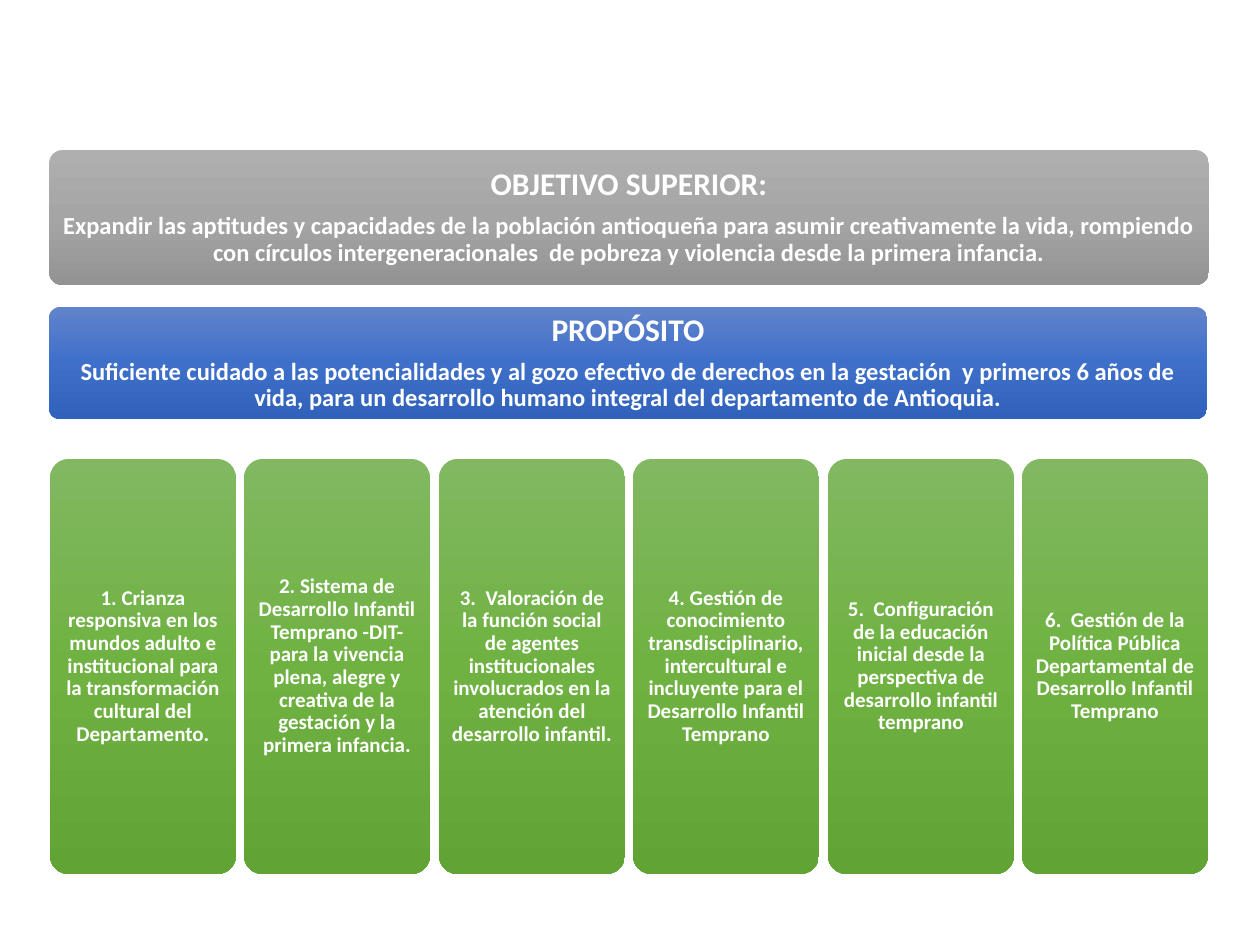
from copy import deepcopy

from pptx import Presentation
from pptx.dml.color import RGBColor
from pptx.enum.shapes import MSO_SHAPE
from pptx.enum.text import MSO_ANCHOR, PP_ALIGN
from pptx.oxml.ns import qn
from pptx.util import Pt

ROUNDED = MSO_SHAPE.ROUNDED_RECTANGLE
MIDDLE = MSO_ANCHOR.MIDDLE
CENTER = PP_ALIGN.CENTER

EMU_PER_PX = 914400 // 126
GRAY = ("AFAFAF", "A5A5A5", "939393")
BLUE = ("6183CB", "3E70CA", "3062BB")
GREEN = ("81B861", "6FB242", "62A336")

LEFT, RIGHT = 50, 1208
PILLAR_TOP, PILLAR_WIDTH, PILLAR_HEIGHT = 459, 186, 415

BANNERS = [
    ((49, 150, 1160, 135), GRAY, "OBJETIVO SUPERIOR:",
     "Expandir las aptitudes y capacidades de la población antioqueña para asumir "
     "creativamente la vida, rompiendo con círculos intergeneracionales  de pobreza "
     "y violencia desde la primera infancia."),
    ((49, 307, 1158, 112), BLUE, "PROPÓSITO",
     "Suficiente cuidado a las potencialidades y al gozo efectivo de derechos en la "
     "gestación  y primeros 6 años de vida, para un desarrollo humano integral del "
     "departamento de Antioquia."),
]
PILLARS = [
    "1. Crianza responsiva en los mundos adulto e institucional para la "
    "transformación cultural del Departamento.",
    "2. Sistema de Desarrollo Infantil Temprano -DIT- para la vivencia plena, alegre "
    "y creativa de la gestación y la primera infancia.",
    "3.  Valoración de la función social de agentes institucionales involucrados en "
    "la atención del desarrollo infantil.",
    "4. Gestión de conocimiento transdisciplinario, intercultural e incluyente para "
    "el Desarrollo Infantil Temprano",
    "5.  Configuración de la educación inicial desde la perspectiva de desarrollo "
    "infantil temprano",
    "6.  Gestión de la Política Pública Departamental de Desarrollo Infantil Temprano",
]


def px(value):
    return value * EMU_PER_PX


def color(value):
    return RGBColor.from_string(value)


def fill_gradient(shape, colors):
    fill = shape.fill
    fill.gradient()
    fill.gradient_angle = 270
    stop_list = shape._element.spPr.find(qn("a:gradFill")).find(qn("a:gsLst"))
    stop_list.insert(1, deepcopy(stop_list[0]))
    for index, (stop, value) in enumerate(zip(fill.gradient_stops, colors)):
        stop.color.rgb = color(value)
        stop.position = index / 2


def add_card(slide, box, colors, inset):
    shape = slide.shapes.add_shape(ROUNDED, *map(px, box))
    shape.adjustments[0] = 0.1
    shape.shadow.inherit = False
    shape.line.fill.background()
    fill_gradient(shape, colors)
    frame = shape.text_frame
    frame.word_wrap = True
    frame.vertical_anchor = MIDDLE
    frame.margin_left = frame.margin_right = px(inset)
    frame.margin_top = frame.margin_bottom = px(inset)
    return frame


def write_text(paragraph, text, size, after=0, font="Calibri", ink="FFFFFF", bold=True):
    paragraph.alignment = CENTER
    paragraph.line_spacing = 0.9
    paragraph.space_after = Pt(after)
    run = paragraph.add_run()
    run.text = text
    run.font.name = font
    run.font.size = Pt(size)
    run.font.bold = bold
    run.font.color.rgb = color(ink)


def add_banner(slide, box, colors, title, body):
    frame = add_card(slide, box, colors, inset=9)
    write_text(frame.paragraphs[0], title, size=18, after=6.3)
    write_text(frame.add_paragraph(), body, size=14)


def add_pillars(slide, texts):
    step = (RIGHT - LEFT - PILLAR_WIDTH) / (len(texts) - 1)
    for index, text in enumerate(texts):
        box = (LEFT + round(index * step), PILLAR_TOP, PILLAR_WIDTH, PILLAR_HEIGHT)
        frame = add_card(slide, box, GREEN, inset=6)
        write_text(frame.paragraphs[0], text, size=12)


def main():
    presentation = Presentation()
    presentation.slide_width = px(1260)
    presentation.slide_height = px(945)
    slide = presentation.slides.add_slide(presentation.slide_layouts[6])
    for banner in BANNERS:
        add_banner(slide, *banner)
    add_pillars(slide, PILLARS)
    presentation.save("out.pptx")


if __name__ == "__main__":
    main()
